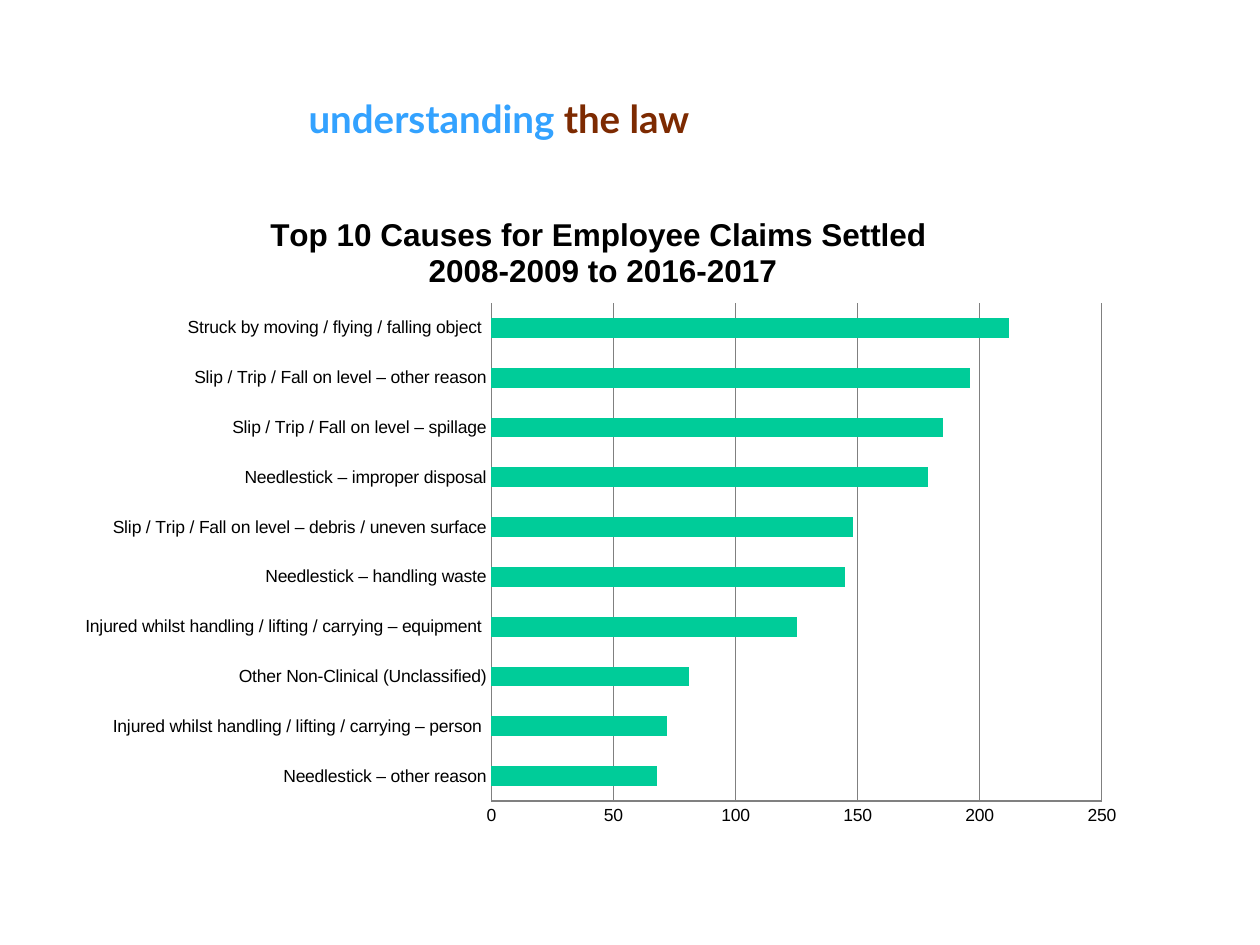
from lxml import etree
from pptx import Presentation
from pptx.chart.data import CategoryChartData
from pptx.dml.color import RGBColor
from pptx.enum.chart import XL_CHART_TYPE, XL_TICK_MARK
from pptx.enum.text import MSO_ANCHOR, PP_ALIGN
from pptx.oxml.ns import qn
from pptx.util import Inches, Pt

BAR = XL_CHART_TYPE.BAR_CLUSTERED
NO_TICK = XL_TICK_MARK.NONE
CENTER = PP_ALIGN.CENTER
MIDDLE = MSO_ANCHOR.MIDDLE

BLUE = RGBColor(0x33, 0xA2, 0xFF)
BROWN = RGBColor(0x7D, 0x2A, 0x01)
GREEN = RGBColor(0x00, 0xCC, 0x99)
GRAY = RGBColor(0x80, 0x80, 0x80)
BLACK = RGBColor(0, 0, 0)

CLAIMS = [
    ("Needlestick – other reason", 68),
    ("Injured whilst handling / lifting / carrying – person ", 72),
    ("Other Non-Clinical (Unclassified)", 81),
    ("Injured whilst handling / lifting / carrying – equipment ", 125),
    ("Needlestick – handling waste", 145),
    ("Slip / Trip / Fall on level – debris / uneven surface", 148),
    ("Needlestick – improper disposal", 179),
    ("Slip / Trip / Fall on level – spillage", 185),
    ("Slip / Trip / Fall on level – other reason", 196),
    ("Struck by moving / flying / falling object ", 212),
]
CLAIMS_TITLE = ["Top 10 Causes for Employee Claims Settled ", "2008-2009 to 2016-2017"]


class SlideBuilder:
    heading_font = "Lato"
    chart_font = "Arial"

    def __init__(self, slide):
        self.slide = slide

    def style(self, font, name, size, color, bold=False):
        for key, value in {"name": name, "size": Pt(size), "bold": bold}.items():
            setattr(font, key, value)
        font.color.rgb = color

    def heading(self, box, parts):
        frame = self.slide.shapes.add_textbox(*map(Inches, box)).text_frame
        frame.word_wrap = True
        frame.vertical_anchor = MIDDLE
        line = frame.paragraphs[0]
        line.alignment = CENTER
        for words, color in parts:
            run = line.add_run()
            run.text = words
            self.style(run.font, self.heading_font, 22, color, True)

    def place(self, parent, index, **settings):
        """Give a chart part a manual layout, as fractions of the chart."""
        layout = parent.find(qn("c:layout"))
        if layout is None:
            layout = etree.Element(qn("c:layout"))
            parent.insert(index, layout)
        manual = etree.SubElement(layout, qn("c:manualLayout"))
        for key, value in settings.items():
            etree.SubElement(manual, qn(f"c:{key}")).set("val", str(value))

    def chart_title(self, chart, lines):
        frame = chart.chart_title.text_frame
        for number, words in enumerate(lines):
            line = frame.add_paragraph() if number else frame.paragraphs[0]
            line.alignment = CENTER
            run = line.add_run()
            run.text = words
            self.style(run.font, self.chart_font, 18, BLACK, True)
        chart.chart_title.include_in_layout = False

    def bar_chart(self, box, title, rows):
        data = CategoryChartData()
        data.categories = [cause for cause, _ in rows]
        data.add_series("Series 1", [count for _, count in rows])
        chart = self.slide.shapes.add_chart(BAR, *map(Inches, box), data).chart
        chart.has_legend = False
        self.style(chart.font, self.chart_font, 10, BLACK)
        self.chart_title(chart, title)

        # Bars
        plot = chart.plots[0]
        plot.gap_width = 150
        plot.vary_by_categories = False
        fill = plot.series[0].format.fill
        fill.solid()
        fill.fore_color.rgb = GREEN

        # Axes and gridlines
        counts = chart.value_axis
        scale = {"minimum_scale": 0, "maximum_scale": 250, "major_unit": 50,
                 "has_major_gridlines": True}
        for key, value in scale.items():
            setattr(counts, key, value)
        for axis in (chart.category_axis, counts):
            axis.major_tick_mark = axis.minor_tick_mark = NO_TICK
        for lined in (chart.category_axis, counts, counts.major_gridlines):
            lined.format.line.color.rgb = GRAY
            lined.format.line.width = Pt(0.75)

        # Plot area
        plot_area = chart.element.find(".//" + qn("c:plotArea"))
        self.place(plot_area, 0, layoutTarget="inner", xMode="edge", yMode="edge",
                   x=0.4, y=0.18, w=0.57, h=0.76)
        self.place(chart.chart_title.element, 1, xMode="edge", yMode="edge",
                   x=0.19, y=0.04)


def main():
    deck = Presentation()
    deck.slide_width, deck.slide_height = Inches(10), Inches(7.5)
    builder = SlideBuilder(deck.slides.add_slide(deck.slide_layouts[6]))

    # Heading
    builder.heading((0, 0.67, 7.92, 0.54),
                    [("understanding ", BLUE), ("the law", BROWN)])

    # Claims by cause
    builder.bar_chart((0.5, 1.47, 8.5, 5.2), CLAIMS_TITLE, CLAIMS)

    deck.save("out.pptx")


if __name__ == "__main__":
    main()
